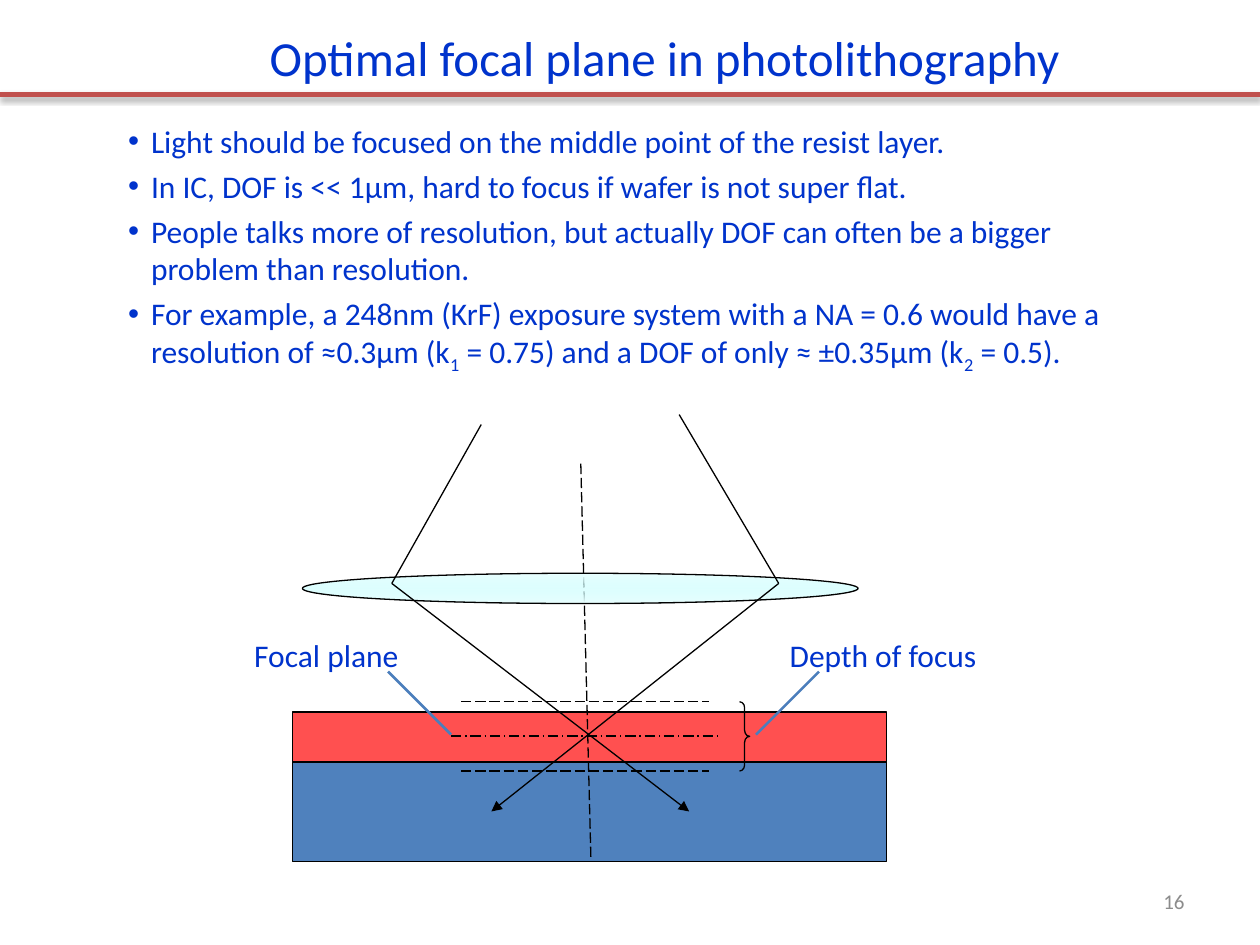
"""Builds the slide on the optimal focal plane in photolithography."""
from copy import deepcopy

from lxml import etree
from pptx import Presentation
from pptx.dml.color import RGBColor
from pptx.enum import dml, shapes, text
from pptx.oxml.ns import qn
from pptx.util import Pt

TITLE = "Optimal focal plane in photolithography"
POINTS = [
    ["Light should be focused on the middle point of the resist layer."],
    ["In IC, DOF is << 1μm, hard to focus if wafer is not super flat."],
    ["People talks more of resolution, but actually DOF can often be a bigger problem than resolution."],
    ["For example, a 248nm (KrF) exposure system with a NA = 0.6 would have a resolution of ≈0.3μm (k",
     "1", " = 0.75) and a DOF of only ≈ ±0.35μm (k", "2", " = 0.5)."],
]
NUMBER = "16"
THEME = {
    "font": "Calibri", "ink": "0033CC", "grey": "8C8C8C", "black": "000000",
    "rule": "C0504D", "lead": "4B7EBC", "resist": "FF5050", "wafer": "4F81BD",
    "rim": "EAFFFF", "core": "CCFFFF", "title": 28, "body": 18, "small": 12,
}
DASH = dml.MSO_LINE.LONG_DASH
DOT = dml.MSO_LINE.LONG_DASH_DOT
LEFT, RIGHT = text.PP_ALIGN.LEFT, text.PP_ALIGN.RIGHT

LAYERS = [("resist", (167, 406.8, 339.8, 28.6)), ("wafer", (167, 435.4, 339.8, 56.9))]
AXIS = (331.9, 265, 337.7, 491.8)
LENS = (172.8, 327.6, 317.5, 17.3)
RAYS = [
    [(275, 242.6), (223.9, 333.4), (393.8, 463.7)],
    [(388.1, 236.9), (445, 333.4), (280.8, 463.7)],
]
FOCUS = (257.8, 420.5, 411.1, 420.5)
DEPTH = (401, 440.6)
LABELS = [
    ("Focal plane", (138.2, 360, 97.9, 28.8), (221.8, 383.8, 257.8, 419.8)),
    ("Depth of focus", (444.2, 360, 122.4, 28.8), (468, 383.8, 432, 419.8)),
]


def rgb(name):
    return RGBColor.from_string(THEME[name])


def node(up, tag, **attrs):
    item = etree.SubElement(up, qn(tag))
    for key, val in attrs.items():
        item.set(key, str(val))
    return item


def line(slide, ends, hue="black", width=0.75, dash=None, arrow=False):
    item = slide.shapes.add_connector(shapes.MSO_CONNECTOR.STRAIGHT, *map(Pt, ends))
    item.line.color.rgb = rgb(hue)
    item.line.width = Pt(width)
    if dash:
        item.line.dash_style = dash
    props = item._element.spPr
    if arrow:
        node(props.find(qn("a:ln")), "a:tailEnd", type="triangle")
    return node(props, "a:effectLst")


def shape(slide, kind, box, hue=None):
    item = slide.shapes.add_shape(kind, *map(Pt, box))
    item.shadow.inherit = False
    item.line.color.rgb = rgb("black")
    item.line.width = Pt(0.75)
    if hue:
        item.fill.solid()
        item.fill.fore_color.rgb = rgb(hue)
    else:
        item.fill.background()
    return item


def style(para, size, hue, align=LEFT):
    para.alignment = align
    for run in para.runs:
        run.font.name = THEME["font"]
        run.font.size = Pt(THEME[size])
        run.font.color.rgb = rgb(hue)


def label(slide, words, box, size="body", hue="ink", align=LEFT, wrap=False):
    item = slide.shapes.add_textbox(*map(Pt, box))
    frame = item.text_frame
    frame.word_wrap = wrap
    frame.text = words
    style(frame.paragraphs[0], size, hue, align)
    return frame


def head(slide):
    item = slide.shapes.title
    item.left, item.top, item.width, item.height = map(Pt, (146.9, 12.2, 470.9, 41))
    frame = item.text_frame
    frame.text = TITLE
    frame.word_wrap = False
    frame.auto_size = text.MSO_AUTO_SIZE.NONE
    frame.vertical_anchor = text.MSO_ANCHOR.TOP
    style(frame.paragraphs[0], "title", "ink")
    glow = line(slide, (0, 54, 720, 54), "rule", 3)
    cast = node(glow, "a:outerShdw", blurRad=Pt(3.1), dist=Pt(1.6), dir=5400000, rotWithShape=0)
    node(node(cast, "a:srgbClr", val=THEME["black"]), "a:alpha", val=38000)


def body(slide):
    frame = label(slide, "", (66.2, 66.2, 594, 150.5), wrap=True)
    for i, parts in enumerate(POINTS):
        para = frame.add_paragraph() if i else frame.paragraphs[0]
        for j, part in enumerate(parts):
            run = para.add_run()
            run.text = part
            if j % 2:
                run._r.get_or_add_rPr().set("baseline", "-25000")
        style(para, "body", "ink")
        para.space_after = Pt(4)
        props = para._p.get_or_add_pPr()
        props.set("marL", str(Pt(13)))
        props.set("indent", str(-Pt(13)))
        node(props, "a:buFont", typeface="Arial")
        node(props, "a:buChar", char="•")


def lens(slide):
    fill = shape(slide, shapes.MSO_SHAPE.OVAL, LENS, "core").fill
    fill.gradient()
    fill.gradient_angle = 270
    for stop in fill.gradient_stops:
        stop.color.rgb = rgb("rim")
    first = fill.gradient_stops[0]._gs
    mid = deepcopy(first)
    mid.set("pos", "50000")
    tint = mid.find(qn("a:srgbClr"))
    tint.set("val", THEME["core"])
    node(tint, "a:alpha", val=65000)
    first.addnext(mid)


def optics(slide):
    for hue, box in LAYERS:
        shape(slide, shapes.MSO_SHAPE.RECTANGLE, box, hue)
    line(slide, AXIS, dash=DASH)
    lens(slide)
    for start, bend, end in RAYS:
        line(slide, start + bend)
        line(slide, bend + end, arrow=True)
    line(slide, FOCUS, dash=DOT)
    for y in DEPTH:
        line(slide, (263.5, y, 405.4, y), dash=DASH)
    top, low = DEPTH
    brace = shape(slide, shapes.MSO_SHAPE.RIGHT_BRACE, (422.6, top, 5.8, low - top))
    brace.adjustments[0] = 0.59
    for words, box, lead in LABELS:
        label(slide, words, box)
        line(slide, lead, "lead", 1.5)


def main():
    deck = Presentation()
    deck.slide_width, deck.slide_height = Pt(720), Pt(540)
    slide = deck.slides.add_slide(deck.slide_layouts[5])
    head(slide)
    body(slide)
    optics(slide)
    frame = label(slide, NUMBER, (516.2, 500.4, 167.8, 28.8), "small", "grey", RIGHT, True)
    frame.vertical_anchor = text.MSO_ANCHOR.MIDDLE
    deck.save("out.pptx")


if __name__ == "__main__":
    main()
